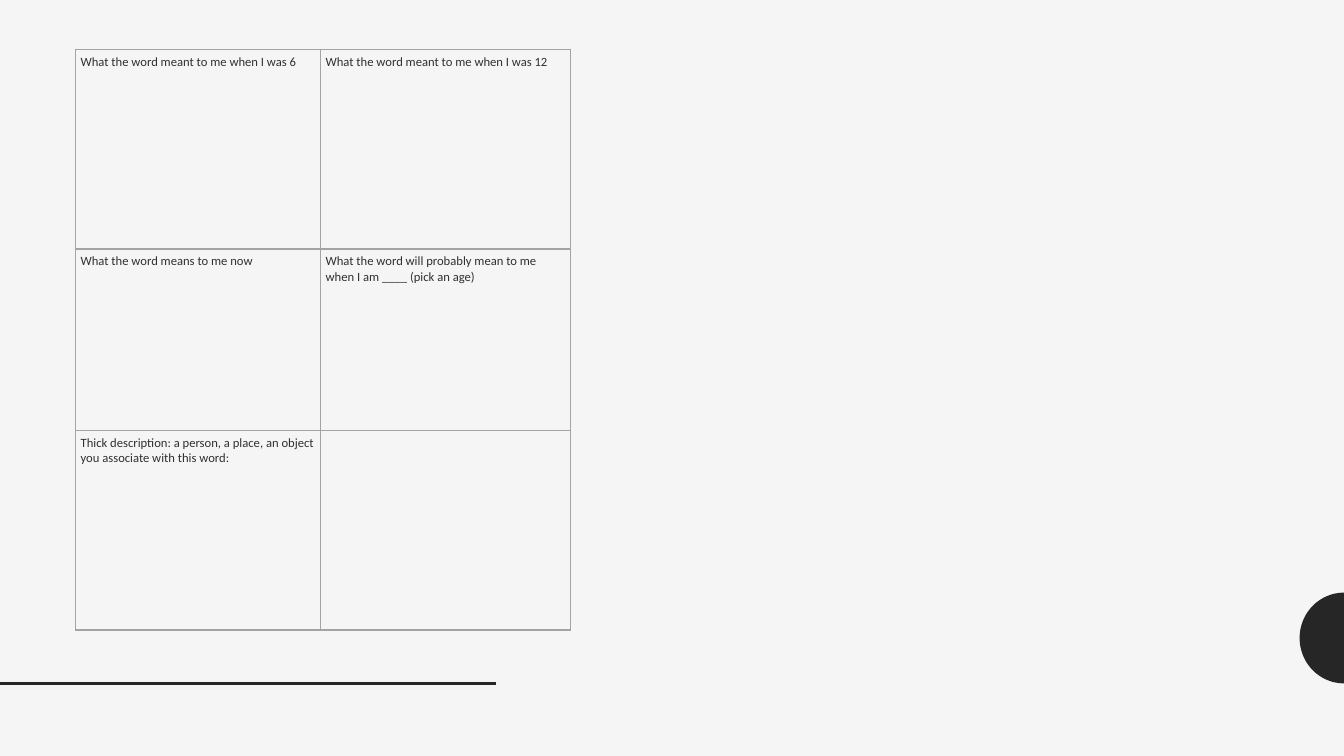
from dataclasses import dataclass
from math import cos, pi, sin

from lxml.etree import SubElement
from pptx import Presentation
from pptx.dml.color import RGBColor as Rgb
from pptx.enum.shapes import MSO_CONNECTOR as Connector
from pptx.oxml.ns import qn
from pptx.slide import Slide
from pptx.table import _Cell as Cell
from pptx.util import Emu, Pt


@dataclass(frozen=True)
class Theme:
    paper: str = "F5F5F5"
    accent: str = "262626"
    border: str = "A3A3A3"
    ink: str = "303031"
    font: str = "Calibri"
    text_size: int = 9
    border_width: int = 1
    rule_width: int = 2


@dataclass(frozen=True)
class Box:
    left: int
    top: int
    width: int
    height: int


@dataclass(frozen=True)
class PromptTable:
    left: int
    top: int
    columns: tuple[int, ...]
    rows: tuple[int, ...]
    prompts: tuple[tuple[str, ...], ...]
    inset: int


THEME = Theme()
EMU_PER_PX = 9144  # 100 px to the inch
PAGE_WIDTH, PAGE_HEIGHT = 1333, 750
HALF_DISC = Box(1289, 588, 44, 90)
RULE = Box(0, 678, 492, 0)
WORD_TABLE = PromptTable(
    left=75,
    top=49,
    columns=(243, 248),
    rows=(198, 180, 198),
    prompts=(
        ("What the word meant to me when I was 6",
         "What the word meant to me when I was 12"),
        ("What the word means to me now",
         "What the word will probably mean to me when I am ____ (pick an age)"),
        ("Thick description: a person, a place, an object you associate with this word:",
         ""),
    ),
    inset=5,
)


def px(length: float) -> Emu:
    return Emu(round(length * EMU_PER_PX))


def color(code: str) -> Rgb:
    return Rgb.from_string(code)


def draw_half_disc(page: Slide, box: Box, steps: int = 48) -> None:
    """Trace the left half of a disc whose centre lies on the right edge."""
    radius = box.height / 2
    right, middle = box.left + box.width, box.top + radius
    angles = [pi * step / steps for step in range(steps + 1)]
    points = [(px(right - box.width * sin(a)), px(middle - radius * cos(a))) for a in angles]
    builder = page.shapes.build_freeform(*points[0])
    builder.add_line_segments(points[1:], close=True)
    disc = builder.convert_to_shape()
    disc.shadow.inherit = False
    disc.fill.solid()
    disc.fill.fore_color.rgb = color(THEME.accent)
    disc.line.fill.background()


def draw_rule(page: Slide, box: Box) -> None:
    rule = page.shapes.add_connector(
        Connector.STRAIGHT, px(box.left), px(box.top),
        px(box.left + box.width), px(box.top + box.height))
    rule.line.color.rgb = color(THEME.accent)
    rule.line.width = Pt(THEME.rule_width)
    SubElement(rule._element.spPr, qn("a:effectLst"))


def add_borders(cell: Cell) -> None:
    properties = cell._tc.get_or_add_tcPr()
    for side in ("lnL", "lnR", "lnT", "lnB"):
        line = SubElement(properties, qn(f"a:{side}"), w=str(Pt(THEME.border_width)))
        fill = SubElement(line, qn("a:solidFill"))
        SubElement(fill, qn("a:srgbClr"), val=THEME.border)


def fill_cell(cell: Cell, prompt: str, inset: int) -> None:
    add_borders(cell)
    cell.fill.background()
    cell.margin_left = cell.margin_right = px(inset)
    cell.margin_top = cell.margin_bottom = px(inset)
    if prompt:
        span = cell.text_frame.paragraphs[0].add_run()
        span.text = prompt
        span.font.name = THEME.font
        span.font.size = Pt(THEME.text_size)
        span.font.color.rgb = color(THEME.ink)


def draw_table(page: Slide, layout: PromptTable) -> None:
    table = page.shapes.add_table(
        len(layout.rows), len(layout.columns), px(layout.left), px(layout.top),
        px(sum(layout.columns)), px(sum(layout.rows))).table
    table.first_row = table.horz_banding = False
    for column, width in zip(table.columns, layout.columns):
        column.width = px(width)
    for row, height, prompts in zip(table.rows, layout.rows, layout.prompts):
        row.height = px(height)
        for cell, prompt in zip(row.cells, prompts):
            fill_cell(cell, prompt, layout.inset)


def main() -> None:
    # Page and background
    deck = Presentation()
    deck.slide_width, deck.slide_height = px(PAGE_WIDTH), px(PAGE_HEIGHT)
    page = deck.slides.add_slide(deck.slide_layouts[6])
    page.background.fill.solid()
    page.background.fill.fore_color.rgb = color(THEME.paper)

    # Decoration
    draw_half_disc(page, HALF_DISC)
    draw_rule(page, RULE)

    # Word prompts
    draw_table(page, WORD_TABLE)
    deck.save("out.pptx")


if __name__ == "__main__":
    main()
